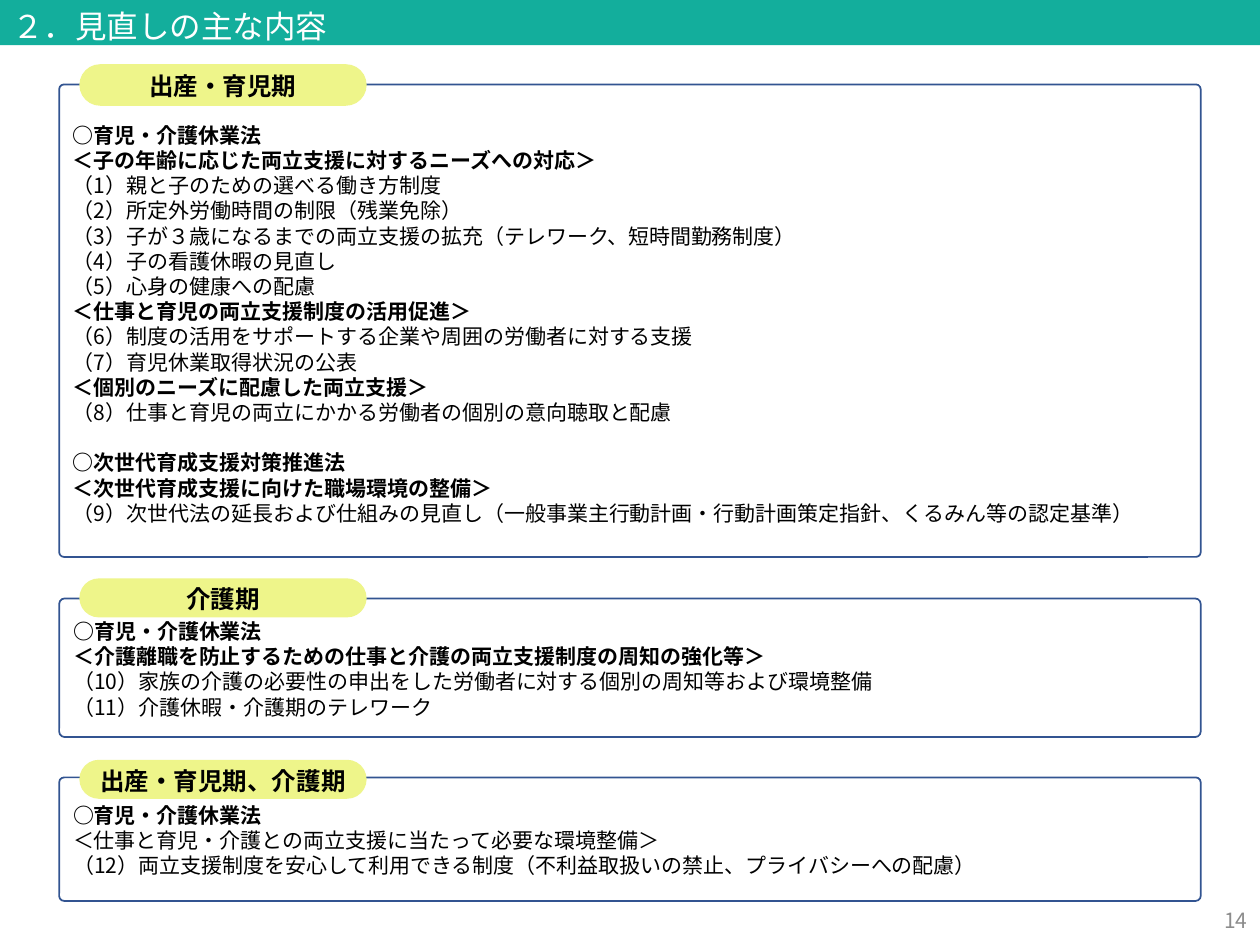
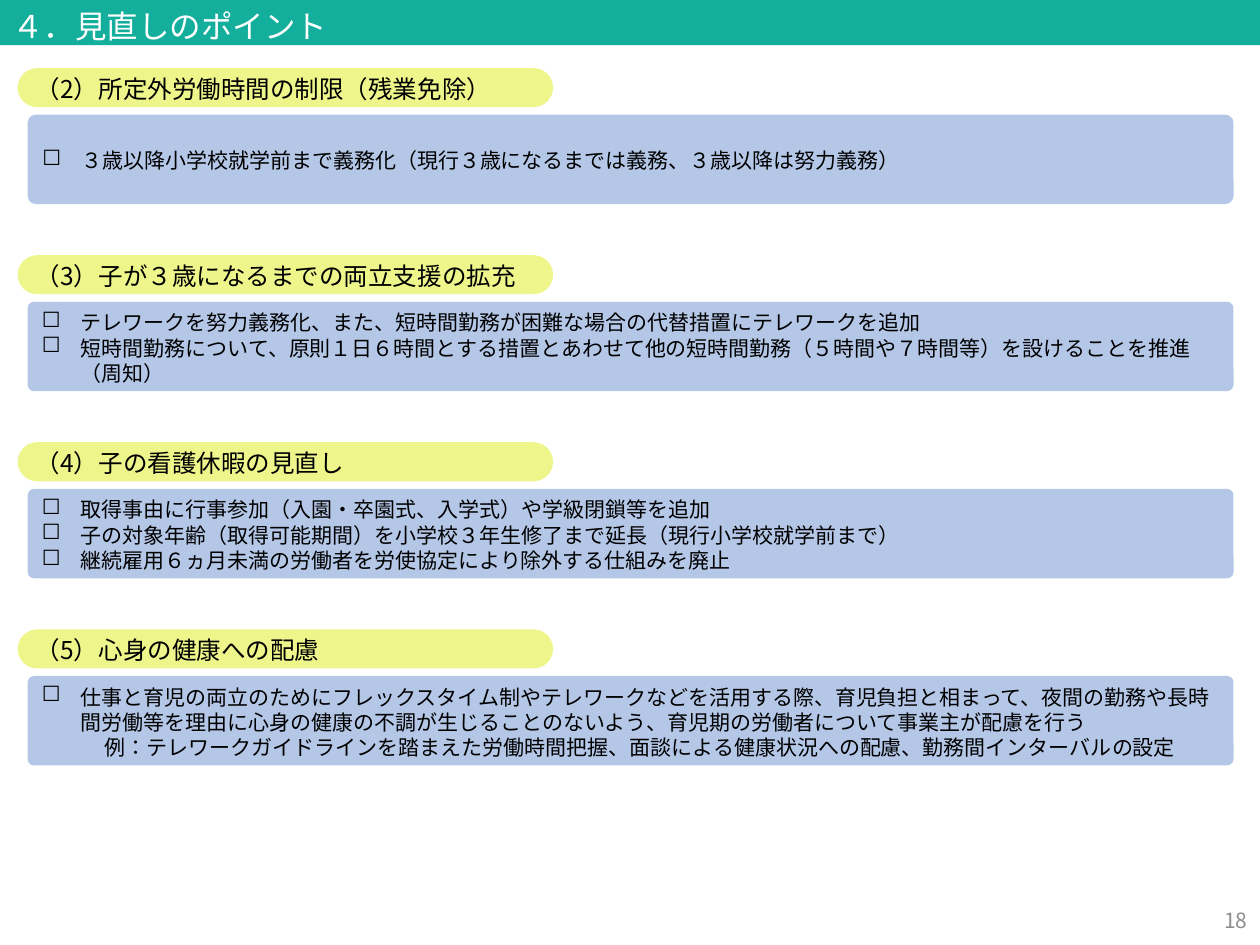
import dataclasses

import pptx
import pptx.dml.color
import pptx.enum.lang
import pptx.enum.shapes
import pptx.enum.text
import pptx.util
from lxml import etree

SHAPE = pptx.enum.shapes.MSO_SHAPE
ALIGN = pptx.enum.text.PP_ALIGN
ANCHOR = pptx.enum.text.MSO_ANCHOR
DRAWING = "{http://schemas.openxmlformats.org/drawingml/2006/main}"


@dataclasses.dataclass(frozen=True)
class Theme:
    font: str = "Noto Sans CJK JP"
    band: str = "13AE9C"
    band_text: str = "FFFFFF"
    pill: str = "EEF58A"
    panel: str = "B4C7E7"
    frame: str = "325491"
    text: str = "000000"
    page: str = "8C8C8C"
    title_size: int = 18
    heading_size: int = 14
    body_size: int = 12
    leading: float = 1.2


@dataclasses.dataclass(frozen=True)
class Line:
    text: str
    bold: bool = False
    bullet: str = ""
    indent: float = 0
    gap: float = 0


class Deck:
    COLUMNS = 100
    ROWS = 75

    def __init__(self, theme):
        self.theme = theme
        self.file = pptx.Presentation()
        self.file.slide_width = pptx.util.Inches(10)
        self.file.slide_height = pptx.util.Inches(7.5)
        self.slide = None

    def columns(self, count):
        return round(self.file.slide_width * count / self.COLUMNS)

    def rows(self, count):
        return round(self.file.slide_height * count / self.ROWS)

    def place(self, area):
        left, top, width, height = area
        return self.columns(left), self.rows(top), self.columns(width), self.rows(height)

    def start_slide(self, title, page):
        self.slide = self.file.slides.add_slide(self.file.slide_layouts[6])
        theme = self.theme
        number = self.slide.shapes.add_textbox(*self.place((77.5, 70.9, 22.5, 4)))
        self.add_lines(number, [Line(page)], theme.body_size, theme.page, ALIGN.RIGHT)
        band = self.shape(self.slide.shapes, SHAPE.RECTANGLE, (0, 0, 100, 3.6), fill=theme.band)
        self.add_lines(band, [Line(title)], theme.title_size, theme.band_text, anchor=ANCHOR.TOP)

    def shape(self, parent, kind, area, fill=None, line=None, corner=None):
        shape = parent.add_shape(kind, *self.place(area))
        shape.shadow.inherit = False
        if corner is not None:
            shape.adjustments[0] = corner
        if fill:
            shape.fill.solid()
            shape.fill.fore_color.rgb = pptx.dml.color.RGBColor.from_string(fill)
        else:
            shape.fill.background()
        if line:
            shape.line.color.rgb = pptx.dml.color.RGBColor.from_string(line)
            shape.line.width = pptx.util.Pt(1)
        else:
            shape.line.fill.background()
        return shape

    def add_lines(self, shape, lines, size, color, align=ALIGN.LEFT, anchor=ANCHOR.MIDDLE, drop=0):
        frame = shape.text_frame
        frame.word_wrap = True
        frame.vertical_anchor = anchor
        frame.margin_left = frame.margin_right = self.columns(1)
        frame.margin_top = self.rows(0.6 + drop)
        frame.margin_bottom = self.rows(0.4)
        for index, line in enumerate(lines):
            paragraph = frame.add_paragraph() if index else frame.paragraphs[0]
            paragraph.alignment = align
            paragraph.line_spacing = pptx.util.Pt(size * self.theme.leading)
            if line.gap:
                paragraph.space_before = pptx.util.Pt(line.gap * size * self.theme.leading)
            self.indent(paragraph, line)
            self.add_run(paragraph, line, size, color)

    def indent(self, paragraph, line):
        properties = paragraph._p.get_or_add_pPr()
        if line.indent:
            properties.set("marL", str(self.columns(line.indent)))
        if line.bullet:
            properties.set("indent", str(-self.columns(line.indent)))
            etree.SubElement(properties, DRAWING + "buChar", char=line.bullet)

    def add_run(self, paragraph, line, size, color):
        run = paragraph.add_run()
        run.text = line.text
        run.font.size = pptx.util.Pt(size)
        run.font.bold = line.bold
        run.font.color.rgb = pptx.dml.color.RGBColor.from_string(color)
        run.font.name = self.theme.font
        run.font.language_id = pptx.enum.lang.MSO_LANGUAGE_ID.JAPANESE
        etree.SubElement(run._r.get_or_add_rPr(), DRAWING + "ea", typeface=self.theme.font)

    def pill(self, parent, area, heading, align=ALIGN.LEFT):
        pill = self.shape(parent, SHAPE.ROUNDED_RECTANGLE, area, fill=self.theme.pill, corner=0.5)
        self.add_lines(pill, [heading], self.theme.heading_size, self.theme.text, align)

    def panel(self, parent, area, lines, corner, fill=None, line=None, drop=0):
        panel = self.shape(parent, SHAPE.ROUNDED_RECTANGLE, area, fill, line, corner)
        self.add_lines(panel, lines, self.theme.body_size, self.theme.text, drop=drop)

    def framed_section(self, heading, lines, top, height, pill_top, pill_height, corner, drop=0):
        section = self.slide.shapes.add_group_shape().shapes
        self.panel(section, (4.7, top, 90.6, height), lines, corner,
                   line=self.theme.frame, drop=drop)
        self.pill(section, (6.3, pill_top, 22.8, pill_height), Line(heading, True), ALIGN.CENTER)

    def point(self, heading, lines, top, corner):
        self.pill(self.slide.shapes, (1.4, top, 42.5, 3.1), Line(heading))
        self.panel(self.slide.shapes, (2.2, top + 3.7, 95.7, 7.1), lines, corner,
                   fill=self.theme.panel)


def strong(text, gap=0):
    return Line(text, bold=True, gap=gap)


def check(text):
    return Line(text, bullet="☐", indent=3.1)


CHILDCARE = [
    strong("○育児・介護休業法"),
    strong("＜子の年齢に応じた両立支援に対するニーズへの対応＞"),
    Line("（1）親と子のための選べる働き方制度"),
    Line("（2）所定外労働時間の制限（残業免除）"),
    Line("（3）子が３歳になるまでの両立支援の拡充（テレワーク、短時間勤務制度）"),
    Line("（4）子の看護休暇の見直し"),
    Line("（5）心身の健康への配慮"),
    strong("＜仕事と育児の両立支援制度の活用促進＞"),
    Line("（6）制度の活用をサポートする企業や周囲の労働者に対する支援"),
    Line("（7）育児休業取得状況の公表"),
    strong("＜個別のニーズに配慮した両立支援＞"),
    Line("（8）仕事と育児の両立にかかる労働者の個別の意向聴取と配慮"),
    strong("○次世代育成支援対策推進法", gap=1),
    strong("＜次世代育成支援に向けた職場環境の整備＞"),
    Line("（9）次世代法の延長および仕組みの見直し（一般事業主行動計画・行動計画策定指針、くるみん等の認定基準）"),
]
NURSING = [
    strong("○育児・介護休業法"),
    strong("＜介護離職を防止するための仕事と介護の両立支援制度の周知の強化等＞"),
    Line("（10）家族の介護の必要性の申出をした労働者に対する個別の周知等および環境整備"),
    Line("（11）介護休暇・介護期のテレワーク"),
]
BOTH_PERIODS = [
    strong("○育児・介護休業法"),
    Line("＜仕事と育児・介護との両立支援に当たって必要な環境整備＞"),
    Line("（12）両立支援制度を安心して利用できる制度（不利益取扱いの禁止、プライバシーへの配慮）"),
]
POINTS = [
    ("（2）所定外労働時間の制限（残業免除）", 0.09, [
        check("３歳以降小学校就学前まで義務化（現行３歳になるまでは義務、３歳以降は努力義務）"),
    ]),
    ("（3）子が３歳になるまでの両立支援の拡充", 0.07, [
        check("テレワークを努力義務化、また、短時間勤務が困難な場合の代替措置にテレワークを追加"),
        check("短時間勤務について、原則１日６時間とする措置とあわせて他の短時間勤務（５時間や７時間等）を設けることを推進（周知）"),
    ]),
    ("（4）子の看護休暇の見直し", 0.07, [
        check("取得事由に行事参加（入園・卒園式、入学式）や学級閉鎖等を追加"),
        check("子の対象年齢（取得可能期間）を小学校３年生修了まで延長（現行小学校就学前まで）"),
        check("継続雇用６ヵ月未満の労働者を労使協定により除外する仕組みを廃止"),
    ]),
    ("（5）心身の健康への配慮", 0.07, [
        check("仕事と育児の両立のためにフレックスタイム制やテレワークなどを活用する際、育児負担と相まって、夜間の勤務や長時間労働等を理由に心身の健康の不調が生じることのないよう、育児期の労働者について事業主が配慮を行う"),
        Line("例：テレワークガイドラインを踏まえた労働時間把握、面談による健康状況への配慮、勤務間インターバルの設定", indent=5),
    ]),
]


def main():
    deck = Deck(Theme())

    deck.start_slide("２．見直しの主な内容", "14")
    deck.framed_section("出産・育児期", CHILDCARE, 6.7, 37.5, 5.1, 3.3, 0.01, drop=0.3)
    deck.framed_section("介護期", NURSING, 47.5, 11, 45.9, 3.1, 0.04)
    deck.framed_section("出産・育児期、介護期", BOTH_PERIODS, 61.7, 9.8, 60.3, 3.1, 0.04)

    deck.start_slide("４．見直しのポイント", "18")
    for index, (heading, corner, lines) in enumerate(POINTS):
        deck.point(heading, lines, 5.4 + 14.85 * index, corner)

    deck.file.save("out.pptx")


if __name__ == "__main__":
    main()
